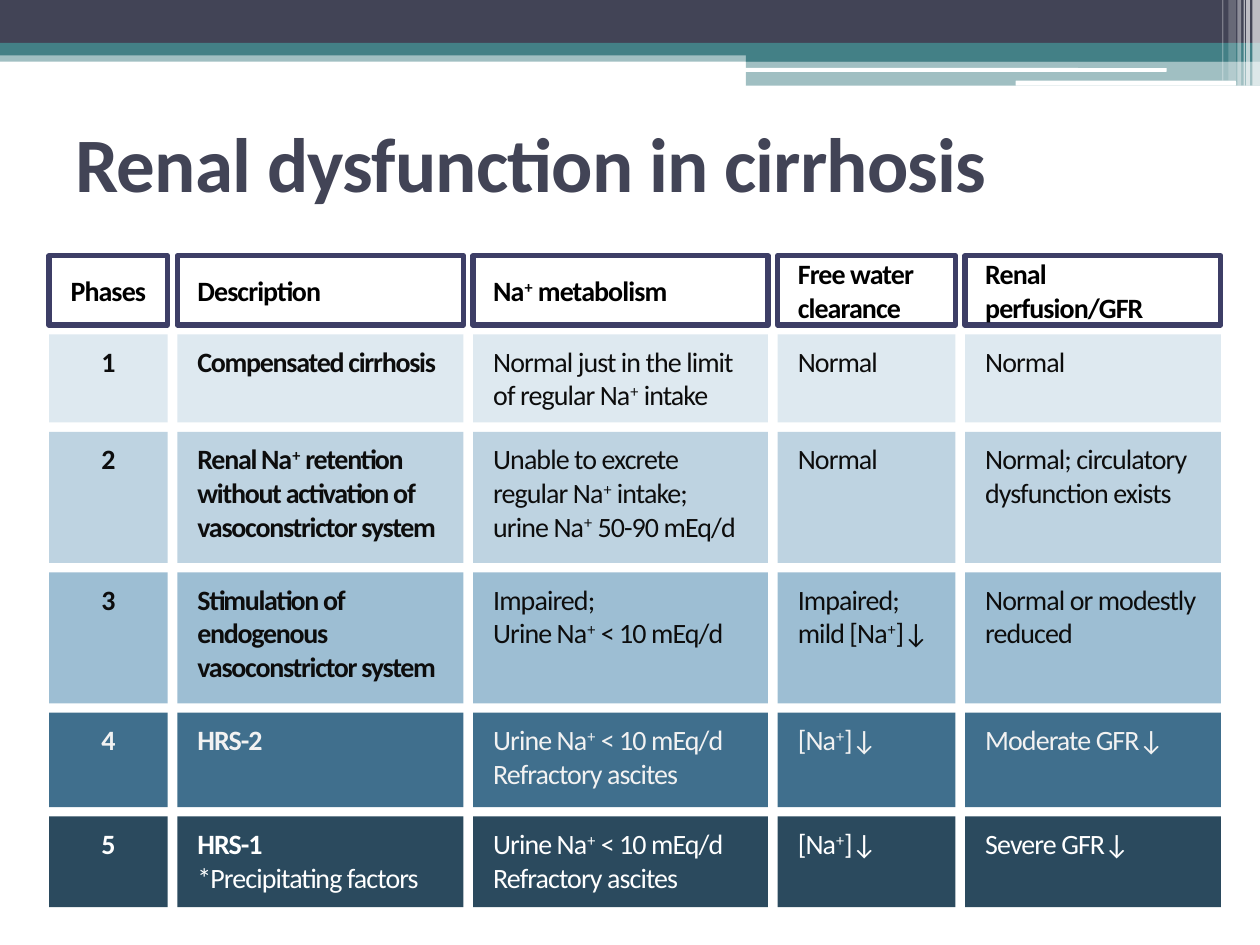
from pptx import Presentation
from pptx.dml.color import RGBColor
from pptx.enum.shapes import MSO_SHAPE
from pptx.enum.text import MSO_ANCHOR, MSO_AUTO_SIZE, PP_ALIGN
from pptx.oxml import parse_xml
from pptx.oxml.ns import nsdecls
from pptx.util import Inches, Pt

RECT, ROUNDED = MSO_SHAPE.RECTANGLE, MSO_SHAPE.ROUNDED_RECTANGLE
TOP, MIDDLE = MSO_ANCHOR.TOP, MSO_ANCHOR.MIDDLE
LEFT, CENTER = PP_ALIGN.LEFT, PP_ALIGN.CENTER

WHITE = RGBColor(0xFF, 0xFF, 0xFF)
BLACK = RGBColor(0x00, 0x00, 0x00)
SLATE = RGBColor(0x42, 0x44, 0x56)
TEAL = RGBColor(0x43, 0x80, 0x86)
INDIGO = RGBColor(0x3D, 0x3E, 0x66)
NEAR_BLACK = RGBColor(0x0D, 0x0D, 0x0D)
NEAR_WHITE = RGBColor(0xF2, 0xF2, 0xF2)
MIST = RGBColor(0xDE, 0xE9, 0xF0)
PALE_BLUE = RGBColor(0xBE, 0xD3, 0xE1)
SOFT_BLUE = RGBColor(0x9D, 0xBE, 0xD3)
STEEL = RGBColor(0x40, 0x6F, 0x8D)
NAVY = RGBColor(0x2B, 0x4A, 0x5E)

FONT = "Calibri"
NORMAL, TIGHT = -50, -70  # letter spacing in hundredths of a point

# Preset, left, top, width, height, colour, opacity in percent
BANNER = [
    (RECT, 0, 0.4, 10, 0.09, TEAL, 50),
    (RECT, 0, 0, 10, 0.34, SLATE, 100),
    (RECT, 0, 0.34, 10, 0.1, TEAL, 100),
    (RECT, 5.92, 0.39, 4.08, 0.1, TEAL, 100),
    (RECT, 5.92, 0.48, 4.08, 0.2, TEAL, 50),
    (ROUNDED, 5.91, 0.54, 3.35, 0.03, WHITE, 100),
    (ROUNDED, 8.06, 0.64, 1.75, 0.04, WHITE, 100),
    (RECT, 9.94, 0, 0.06, 0.68, WHITE, 65),
    (RECT, 9.89, 0, 0.03, 0.68, WHITE, 65),
    (RECT, 9.87, 0, 0.01, 0.68, WHITE, 60),
    (RECT, 9.82, 0, 0.03, 0.68, WHITE, 40),
    (RECT, 9.75, 0, 0.06, 0.64, WHITE, 20),
    (RECT, 9.7, 0, 0.01, 0.64, WHITE, 30),
]

# Grid of phases: the gaps are what the cells leave of the whole extent
GRID_LEFT, GRID_TOP, GRID_WIDTH, GRID_HEIGHT = 0.39, 2.03, 9.3, 5.17
COLUMN_WIDTHS = [0.94, 2.27, 2.34, 1.41, 2.03]
HEADER = ["Phases", "Description", "Na+ metabolism", "Free water clearance",
          "Renal perfusion/GFR"]
HEADER_HEIGHT = 0.55

# Height, fill, text colour, spacing of the description, cells
PHASES = [
    (0.7, MIST, NEAR_BLACK, TIGHT,
     ["1", "Compensated cirrhosis",
      "Normal just in the limit of regular Na+ intake", "Normal", "Normal"]),
    (1.04, PALE_BLUE, NEAR_BLACK, TIGHT,
     ["2", "Renal Na+ retention without activation of vasoconstrictor system",
      "Unable to excrete regular Na+ intake;\nurine Na+ 50-90 mEq/d",
      "Normal", "Normal; circulatory dysfunction exists"]),
    (1.04, SOFT_BLUE, NEAR_BLACK, TIGHT,
     ["3", "Stimulation of endogenous vasoconstrictor system",
      "Impaired;\nUrine Na+ < 10 mEq/d", "Impaired; mild [Na+]↓",
      "Normal or modestly reduced"]),
    (0.75, STEEL, NEAR_WHITE, NORMAL,
     ["4", "HRS-2", "Urine Na+ < 10 mEq/d\nRefractory ascites", "[Na+]↓",
      "Moderate GFR↓"]),
    (0.72, NAVY, WHITE, NORMAL,
     ["5", "HRS-1\n*Precipitating factors",
      "Urine Na+ < 10 mEq/d\nRefractory ascites", "[Na+]↓", "Severe GFR↓"]),
]


def offsets(start, extent, sizes):
    """Starts of the sizes, spread over the extent with equal gaps."""
    gap = (extent - sum(sizes)) / (len(sizes) - 1)
    return [start + sum(sizes[:i]) + i * gap for i in range(len(sizes))]


def add_box(page, preset, place, fill, opacity=100):
    box = page.shapes.add_shape(preset, *(Inches(v) for v in place))
    box.shadow.inherit = False
    box.fill.solid()
    box.fill.fore_color.rgb = fill
    box.line.fill.background()
    if opacity < 100:
        color = box.fill._xPr.find(".//{*}srgbClr")
        color.append(parse_xml(
            f'<a:alpha {nsdecls("a")} val="{opacity * 1000}"/>'))
    return box


def write_para(para, text, size, color, bold, spacing=NORMAL, align=LEFT):
    """Write one paragraph; a plus sign is raised as an ion charge."""
    para.alignment = align
    font = para.font
    font.name, font.size, font.bold = FONT, Pt(size), bold
    font.color.rgb = color
    for part in text.partition("+"):
        if part:
            span = para.add_run()
            span.text = part
            properties = span.font._element
            properties.set("spc", str(spacing))
            if part == "+":
                properties.set("baseline", "30000")


def add_cell(page, place, fill, text, color, bold, spacing, align, anchor):
    box = add_box(page, RECT, place, fill)
    frame = box.text_frame
    frame.word_wrap = True
    frame.vertical_anchor = anchor
    frame.margin_left = frame.margin_right = Inches(0.16)
    frame.margin_top = frame.margin_bottom = Inches(0.08)
    for i, line in enumerate(text.split("\n")):
        para = frame.add_paragraph() if i else frame.paragraphs[0]
        write_para(para, line, 16, color, bold and i == 0, spacing, align)
    return box


def add_title(page, text):
    title = page.shapes.title
    title.left, title.top = Inches(0.5), Inches(0.7)
    title.width, title.height = Inches(9), Inches(1.17)
    frame = title.text_frame
    frame.auto_size = MSO_AUTO_SIZE.NONE
    frame.vertical_anchor = MIDDLE
    write_para(frame.paragraphs[0], text, 44, SLATE, True)


def add_phase_grid(page):
    lefts = offsets(GRID_LEFT, GRID_WIDTH, COLUMN_WIDTHS)
    heights = [HEADER_HEIGHT] + [phase[0] for phase in PHASES]
    tops = offsets(GRID_TOP, GRID_HEIGHT, heights)

    # Outlined header cells
    for column, text in enumerate(HEADER):
        place = (lefts[column], tops[0], COLUMN_WIDTHS[column], HEADER_HEIGHT)
        box = add_cell(page, place, WHITE, text, BLACK, True, NORMAL,
                       LEFT if column else CENTER, MIDDLE)
        box.line.color.rgb = INDIGO
        box.line.width = Pt(3)

    # One filled row for each phase
    for top, (height, fill, color, tightness, cells) in zip(tops[1:], PHASES):
        for column, text in enumerate(cells):
            place = (lefts[column], top, COLUMN_WIDTHS[column], height)
            add_cell(page, place, fill, text, color, column < 2,
                     tightness if column == 1 else NORMAL,
                     LEFT if column else CENTER, TOP)


def main():
    deck = Presentation()
    deck.slide_width, deck.slide_height = Inches(10), Inches(7.5)
    page = deck.slides.add_slide(deck.slide_layouts[5])
    for preset, *place, color, opacity in BANNER:
        add_box(page, preset, place, color, opacity)
    add_title(page, "Renal dysfunction in cirrhosis")
    add_phase_grid(page)
    deck.save("out.pptx")


if __name__ == "__main__":
    main()
